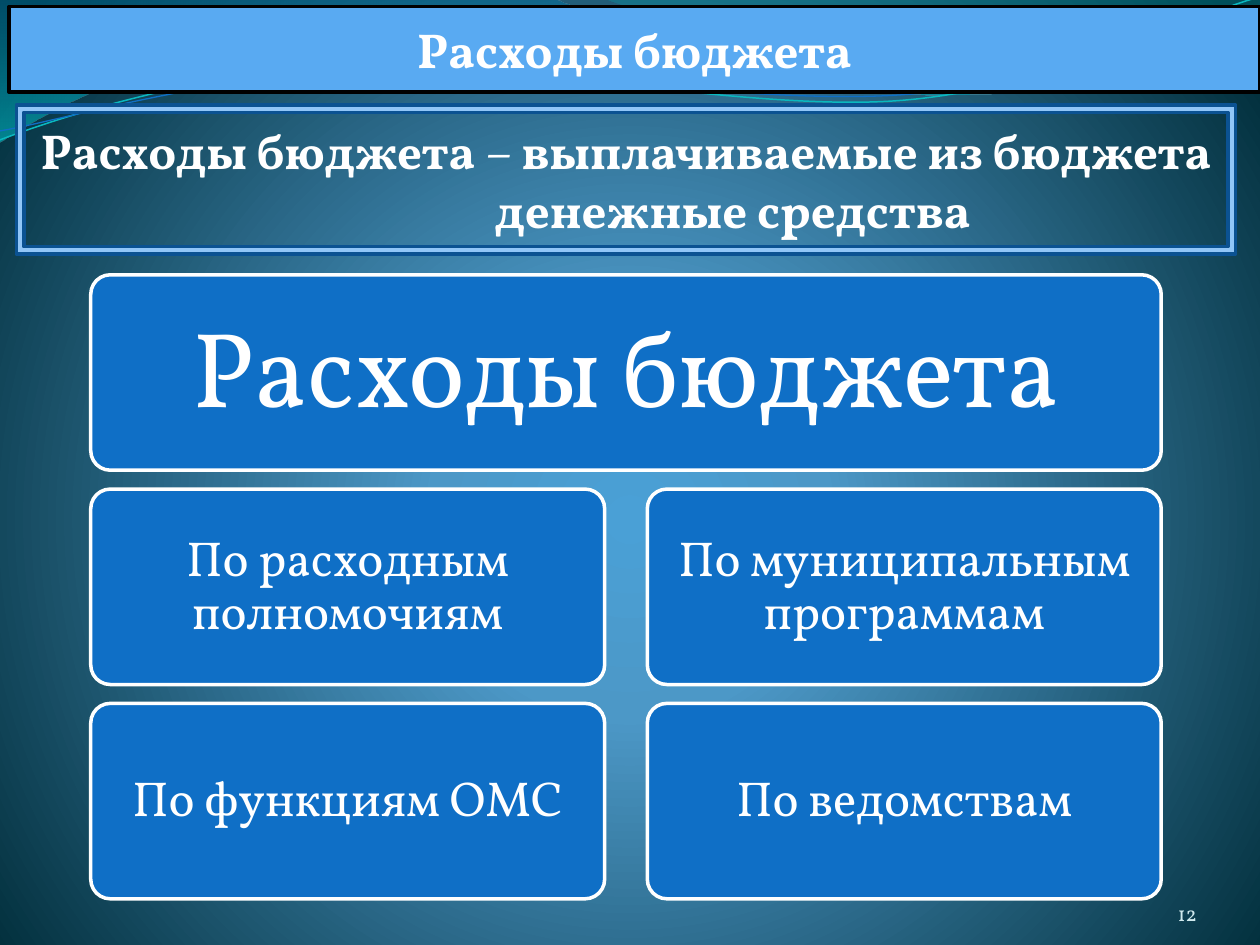
"""Build the budget expenditure slide."""
from lxml import etree
from pptx import Presentation
from pptx.dml.color import RGBColor
from pptx.enum.shapes import MSO_SHAPE as SHAPE
from pptx.enum.text import MSO_ANCHOR as ANCHOR, MSO_AUTO_SIZE as AUTO, PP_ALIGN as ALIGN
from pptx.oxml.ns import qn
from pptx.util import Cm, Pt


def rgb(color):
    """Turn a hex string into a colour."""
    return RGBColor.from_string(color)


def write(p, text, size=28, bold=False, color="FFFFFF", align=ALIGN.CENTER):
    """Add a formatted run to a paragraph."""
    p.alignment = align
    r = p.add_run()
    r.text = text
    r.font.name = "Vollkorn"
    r.font.size = Pt(size)
    r.font.bold = bold
    r.font.color.rgb = rgb(color)


prs = Presentation()
prs.slide_width, prs.slide_height = Cm(25.4), Cm(19.05)
s = prs.slides.add_slide(prs.slide_layouts[5])
s.background.fill.gradient()

waves = [
    ((0, 0), [(11.18, -0.03), (12.09, 0.43, 16.87, 1.6, 19.25, 1.6),
              (21.67, 1.6, 24.33, 0.66, 25.4, 0.23), (25.43, 0.91),
              (24.97, 1.12, 22.1, 1.93, 18.95, 1.91),
              (15.8, 1.91, 9.7, 0.71, 6.53, 0.86),
              (3.28, 0.91, 1.17, 2.11, -0.03, 2.87)], None, 0),
    ((12.17, -0.03), [(12.93, 0.28, 17.32, 1.57, 19.53, 1.65),
                      (21.74, 1.75, 24.41, 0.81, 25.4, 0.53), (25.4, 0)], None, 0),
    ((0, 2.82), [(1.22, 2.36, 4.01, 1.45, 7.04, 1.32),
                 (10.03, 1.19, 15.06, 2.26, 18.11, 2.03),
                 (21.16, 1.8, 23.83, 0.38, 25.35, -0.05)], "0AB8BF", 0.85),
    ((0, 2.64), [(1.19, 2.44, 4.17, 1.55, 7.19, 1.42),
                 (10.24, 1.3, 15.16, 2.13, 18.21, 1.91),
                 (21.23, 1.7, 23.9, 0.53, 25.4, 0.15)], "0F6FC6", 0.75),
]
for start, segments, color, width in waves:
    builder = s.shapes.build_freeform(Cm(start[0]), Cm(start[1]))
    builder.add_line_segments([(Cm(seg[-2]), Cm(seg[-1])) for seg in segments], close=color is None)
    sp = builder.convert_to_shape()
    for line_to, seg in zip(list(sp._element.iter(qn("a:lnTo"))), segments):
        if len(seg) == 6:
            curve = etree.Element(qn("a:cubicBezTo"))
            for x, y in zip(seg[::2], seg[1::2]):
                etree.SubElement(curve, qn("a:pt"), x=str(Cm(x) - sp.left), y=str(Cm(y) - sp.top))
            line_to.getparent().replace(line_to, curve)
    sp.shadow.inherit = False
    if color:
        sp.fill.background()
        sp.line.color.rgb = rgb(color)
        sp.line.width = Pt(width)
    else:
        sp.fill.gradient()
        sp.line.fill.background()

gradients = [
    ([(0, "4AA0D6", 100), (25, "4C98C7", 100), (100, "002C38", 100)], "circle"),
    ([(0, "0074A1", 45), (100, "00C6CF", 55)], "linear"),
    ([(0, "00A1A9", 30), (80, "008BBF", 45)], "linear"),
]
for grad, (stops, kind) in zip(list(s._element.iter(qn("a:gradFill"))), gradients):
    for child in list(grad):
        grad.remove(child)
    stop_list = etree.SubElement(grad, qn("a:gsLst"))
    for pos, color, alpha in stops:
        stop = etree.SubElement(stop_list, qn("a:gs"), pos=str(pos * 1000))
        clr = etree.SubElement(stop, qn("a:srgbClr"), val=color)
        if alpha < 100:
            etree.SubElement(clr, qn("a:alpha"), val=str(alpha * 1000))
    if kind == "circle":
        way = etree.SubElement(grad, qn("a:path"), path="circle")
        etree.SubElement(way, qn("a:fillToRect"), l="10000", t="110000", r="10000", b="100000")
    else:
        etree.SubElement(grad, qn("a:lin"), ang="5400000", scaled="0")

title = s.shapes.title
title.left, title.top, title.width, title.height = Cm(0.18), Cm(0.13), Cm(25.22), Cm(1.73)
geom = etree.Element(qn("a:prstGeom"), prst="flowChartInternalStorage")
etree.SubElement(geom, qn("a:avLst"))
title._element.spPr.find(qn("a:xfrm")).addnext(geom)
title.fill.solid()
title.fill.fore_color.rgb = rgb("59AAF2")
title.line.color.rgb = rgb("000000")
title.line.width = Pt(2)
tf = title.text_frame
tf.auto_size = AUTO.NONE
tf.word_wrap = True
tf.vertical_anchor = ANCHOR.MIDDLE
write(tf.paragraphs[0], "Расходы бюджета", bold=True)
s.shapes._spTree.append(title._element)

left, top, height = 1.83, 5.54, 3.94
half, col_step, row_step = 10.36, 11.22, 4.32
boxes = [(left, top, col_step + half, "Расходы бюджета", 61, 0.74)]
columns = [("По расходным полномочиям", "По функциям ОМС"),
           ("По муниципальным программам", "По ведомствам")]
for col, texts in enumerate(columns):
    for row, text in enumerate(texts, 1):
        boxes.append((left + col * col_step, top + row * row_step, half, text, 28, 0.41))

for x, y, w, text, size, inset in boxes:
    sp = s.shapes.add_shape(SHAPE.ROUNDED_RECTANGLE, Cm(x), Cm(y), Cm(w), Cm(height))
    sp.adjustments[0] = 0.1
    sp.shadow.inherit = False
    sp.fill.solid()
    sp.fill.fore_color.rgb = rgb("0F6FC6")
    sp.line.color.rgb = rgb("FFFFFF")
    sp.line.width = Pt(2)
    tf = sp.text_frame
    tf.word_wrap = True
    tf.vertical_anchor = ANCHOR.MIDDLE
    tf.margin_left = tf.margin_right = tf.margin_top = tf.margin_bottom = Cm(inset)
    tf.paragraphs[0].line_spacing = 0.9
    write(tf.paragraphs[0], text, size=size)

frame = s.shapes.add_shape(SHAPE.FRAME, Cm(0.33), Cm(2.12), Cm(24.58), Cm(3))
frame.adjustments[0] = 0.05
frame.shadow.inherit = False
frame.fill.solid()
frame.fill.fore_color.rgb = rgb("91C6F7")
frame.line.color.rgb = rgb("0B5292")
frame.line.width = Pt(2)
tf = frame.text_frame
tf.word_wrap = True
tf.vertical_anchor = ANCHOR.MIDDLE
p = tf.paragraphs[0]
write(p, "Расходы бюджета ", bold=True)
write(p, "– ")
write(p, "выплачиваемые из бюджета", bold=True)
p = tf.add_paragraph()
p._p.get_or_add_pPr().set("marL", str(Cm(4.3)))
write(p, "денежные средства", bold=True)

number = s.shapes.add_textbox(Cm(22.02), Cm(17.65), Cm(2.11), Cm(1.02))
tf = number.text_frame
tf.word_wrap = True
tf.vertical_anchor = ANCHOR.BOTTOM
tf.margin_left = tf.margin_right = tf.margin_top = tf.margin_bottom = 0
write(tf.paragraphs[0], "12", size=12, color="D1EAEE", align=ALIGN.RIGHT)

prs.save("out.pptx")
